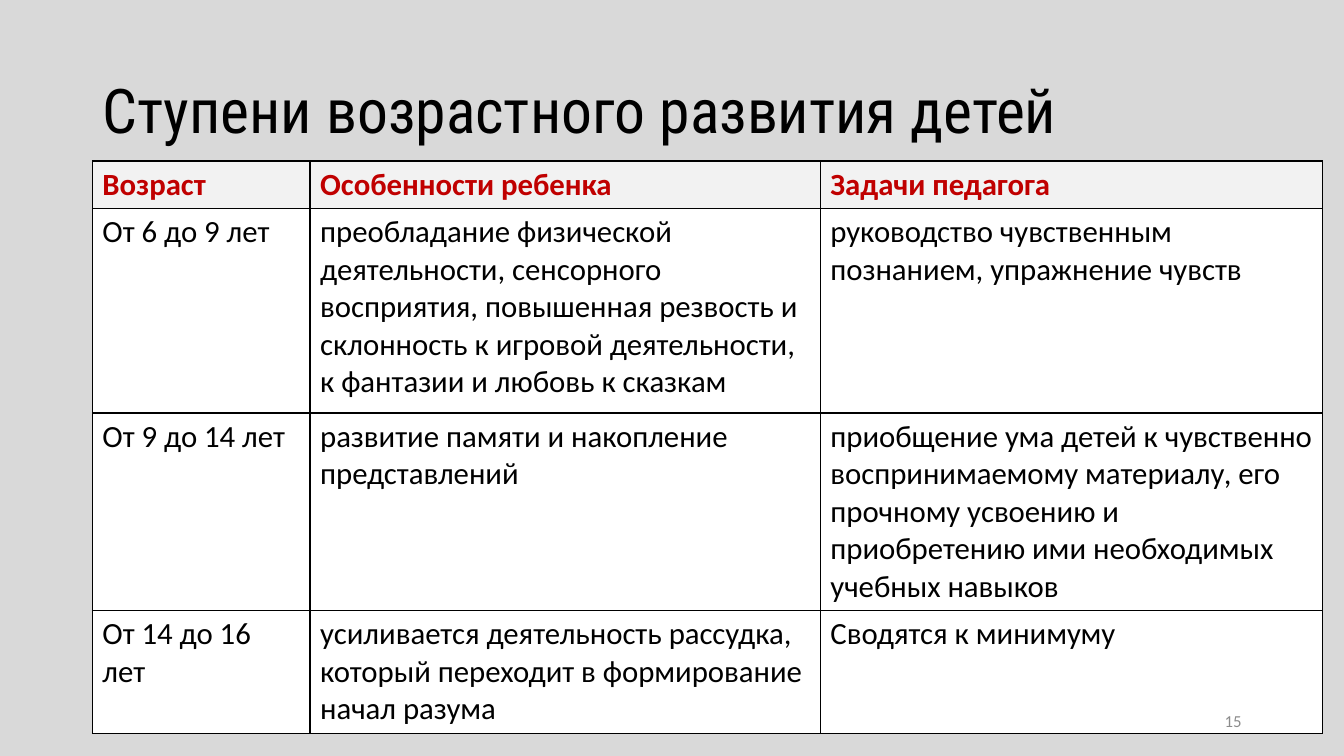
from pptx import Presentation
from pptx.dml.color import RGBColor
from pptx.enum.text import MSO_ANCHOR, MSO_AUTO_SIZE, PP_ALIGN
from pptx.oxml.ns import qn
from pptx.util import Pt
from lxml import etree

MIDDLE = MSO_ANCHOR.MIDDLE
NO_AUTOFIT = MSO_AUTO_SIZE.NONE
LEFT, RIGHT = PP_ALIGN.LEFT, PP_ALIGN.RIGHT

COLORS = {
    "background": "D9D9D9",
    "text": "000000",
    "header_text": "C00000",
    "header_fill": "F2F2F2",
    "cell_fill": "FFFFFF",
    "border": "000000",
    "number": "8C8C8C",
}
TITLE_FONT, BODY_FONT = "Roboto Condensed", "Calibri"
TITLE_ONLY_LAYOUT = 5

COLUMN_WIDTHS = [155.5, 364.5, 358.5]
ROW_HEIGHTS = [34, 146, 141, 88]
AGE_STAGES = [
    ["Возраст", "Особенности ребенка", "Задачи педагога"],
    ["От 6 до 9 лет",
     "преобладание физической деятельности, сенсорного восприятия, повышенная "
     "резвость и склонность к игровой деятельности, к фантазии и любовь к сказкам",
     "руководство чувственным познанием, упражнение чувств"],
    ["От 9 до 14 лет",
     "развитие памяти и накопление представлений",
     "приобщение ума детей к чувственно воспринимаемому материалу, его прочному "
     "усвоению и приобретению ими необходимых учебных навыков"],
    ["От 14 до 16 лет",
     "усиливается деятельность рассудка, который переходит в формирование "
     "начал разума",
     "Сводятся к минимуму"],
]


def write_text(frame, text, size, color="text", font=BODY_FONT, bold=False,
               align=LEFT, line_spacing=None):
    paragraph = frame.paragraphs[0]
    paragraph.alignment = align
    paragraph.line_spacing = line_spacing
    run = paragraph.add_run()
    run.text = text
    run.font.name = font
    run.font.size = Pt(size)
    run.font.bold = bold
    run.font.color.rgb = RGBColor.from_string(COLORS[color])


def fill_solid(fill, color):
    fill.solid()
    fill.fore_color.rgb = RGBColor.from_string(COLORS[color])


def set_cell_borders(cell, width=1):
    properties = cell._tc.get_or_add_tcPr()
    for index, side in enumerate(("lnL", "lnR", "lnT", "lnB")):
        line = etree.Element(qn(f"a:{side}"), w=str(Pt(width)))
        solid = etree.SubElement(line, qn("a:solidFill"))
        etree.SubElement(solid, qn("a:srgbClr"), val=COLORS["border"])
        properties.insert(index, line)


def add_title(slide, left, top, width, height):
    title = slide.shapes.title
    title.left, title.top = Pt(left), Pt(top)
    title.width, title.height = Pt(width), Pt(height)
    frame = title.text_frame
    frame.auto_size = NO_AUTOFIT
    frame.vertical_anchor = MIDDLE
    write_text(frame, "Ступени возрастного развития детей", size=44,
               font=TITLE_FONT, line_spacing=0.9)


def add_stages_table(slide, left, top):
    table = slide.shapes.add_table(
        len(AGE_STAGES), len(COLUMN_WIDTHS), Pt(left), Pt(top),
        Pt(sum(COLUMN_WIDTHS)), Pt(sum(ROW_HEIGHTS))).table
    table.first_row = table.horz_banding = False
    for column, width in zip(table.columns, COLUMN_WIDTHS):
        column.width = Pt(width)
    for row, height, texts in zip(table.rows, ROW_HEIGHTS, AGE_STAGES):
        row.height = Pt(height)
        header = texts is AGE_STAGES[0]
        for cell, text in zip(row.cells, texts):
            fill_solid(cell.fill, "header_fill" if header else "cell_fill")
            set_cell_borders(cell)
            write_text(cell.text_frame, text, size=22, bold=header,
                       color="header_text" if header else "text")


def add_slide_number(slide, left, top, width, height):
    number = slide.shapes.add_textbox(Pt(left), Pt(top), Pt(width), Pt(height))
    frame = number.text_frame
    frame.word_wrap = True
    frame.vertical_anchor = MIDDLE
    write_text(frame, "15", size=12, color="number", align=RIGHT)


def main():
    deck = Presentation()
    deck.slide_width, deck.slide_height = Pt(960), Pt(540)
    slide = deck.slides.add_slide(deck.slide_layouts[TITLE_ONLY_LAYOUT])
    fill_solid(slide.background.fill, "background")
    add_title(slide, 66, 28.75, 828, 104.5)
    add_stages_table(slide, 66, 115)
    add_slide_number(slide, 678, 500.5, 216, 28.75)
    deck.save("out.pptx")


if __name__ == "__main__":
    main()
